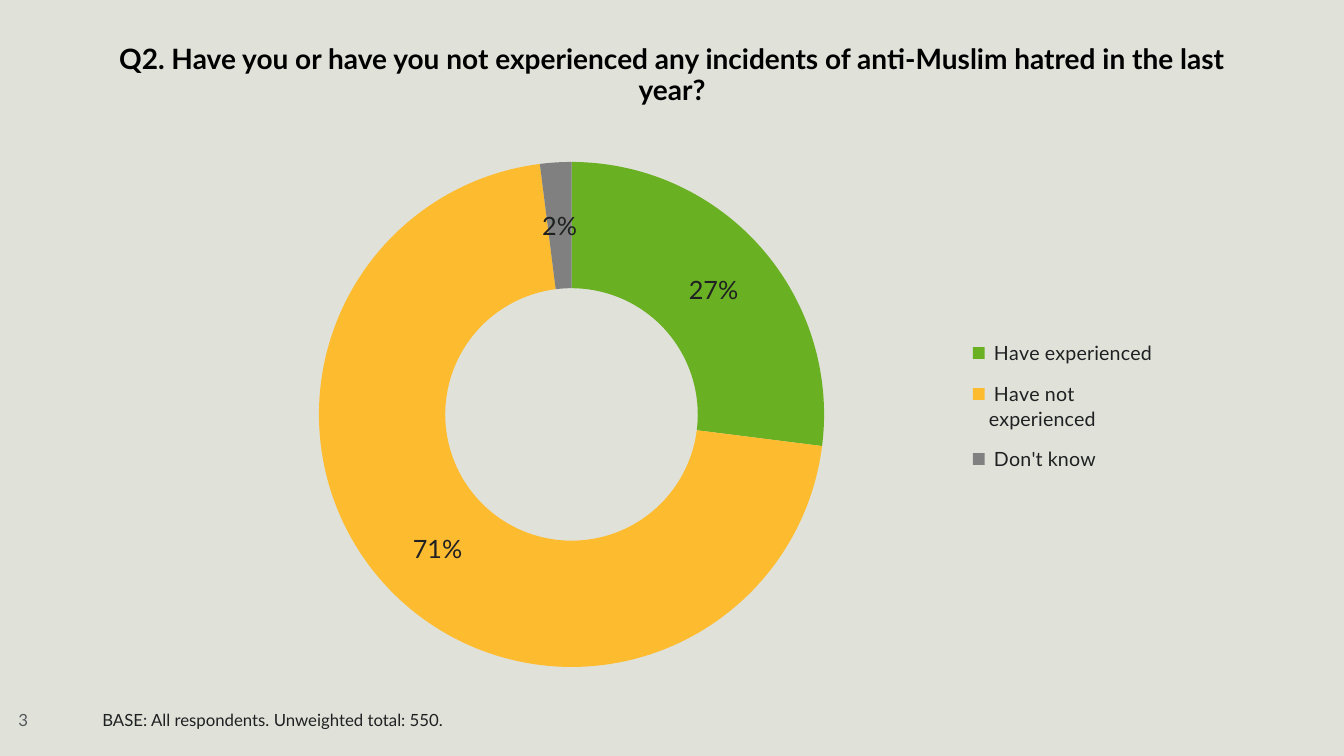
from dataclasses import dataclass

from lxml import etree
from pptx import Presentation
from pptx import util as u
from pptx.chart.data import CategoryChartData
from pptx.dml.color import RGBColor
from pptx.enum import chart as ch
from pptx.enum import text
from pptx.oxml import ns

# Grid of 160 columns by 90 rows
COLS, ROWS = 160, 90
WIDTH, HEIGHT = u.Inches(13.33), u.Inches(7.5)


@dataclass(frozen=True)
class Theme:
    font: str = "Lato"
    background: str = "E0E2DA"
    title: str = "000000"
    ink: str = "1F2021"
    muted: str = "55585A"
    title_size: int = 20
    label_size: int = 18
    legend_size: int = 14
    note_size: int = 12


@dataclass(frozen=True)
class Area:
    col: float
    row: float
    cols: float
    rows: float

    def emu(self) -> tuple[int, int, int, int]:
        return (round(WIDTH * self.col / COLS), round(HEIGHT * self.row / ROWS),
                round(WIDTH * self.cols / COLS), round(HEIGHT * self.rows / ROWS))


@dataclass(frozen=True)
class Label:
    words: str
    area: Area
    size: int
    color: str
    align: text.PP_ALIGN = text.PP_ALIGN.LEFT
    bold: bool = False


@dataclass(frozen=True)
class Answer:
    name: str
    share: float
    color: str


THEME = Theme()
CENTER = text.PP_ALIGN.CENTER
TITLE = Label("Q2. Have you or have you not experienced any incidents of "
              "anti-Muslim hatred in the last year?",
              Area(11, 4.8, 138, 8.5), THEME.title_size, THEME.title, CENTER, True)
NOTES = (
    Label("3", Area(1, 83.4, 7.3, 4.8), THEME.note_size, THEME.muted),
    Label("BASE: All respondents. Unweighted total: 550.",
          Area(11, 83.4, 125, 4.8), THEME.note_size, THEME.ink),
)
ANSWERS = (
    Answer(" Have experienced", 0.27, "6AB023"),
    Answer(" Have not experienced", 0.71, "FDBB30"),
    Answer(" Don't know", 0.02, "808080"),
)
CHART = Area(11, 17.64, 138, 63.5)
RING = Area(37.97, 19.28, 60.14, 60.14)
LEGEND = Area(114.5, 38.6, 24, 19.5)


def write(s, label: Label) -> None:
    """Place a text shape and fill it with one formatted run."""
    s.left, s.top, s.width, s.height = label.area.emu()
    tf = s.text_frame
    tf.word_wrap = True
    tf.auto_size = text.MSO_AUTO_SIZE.NONE
    tf.vertical_anchor = text.MSO_ANCHOR.MIDDLE
    p = tf.paragraphs[0]
    p.alignment = label.align
    p.line_spacing = 0.9
    p.space_before = u.Pt(0)
    r = p.add_run()
    r.text = label.words
    r.font.name = THEME.font
    r.font.size = u.Pt(label.size)
    r.font.bold = label.bold
    r.font.color.rgb = RGBColor.from_string(label.color)


def style_font(font, size: int) -> None:
    font.name = THEME.font
    font.size = u.Pt(size)
    font.color.rgb = RGBColor.from_string(THEME.ink)


def set_layout(parent, before: str, area: Area, inner: bool = False) -> None:
    """Fix a chart part to an area of the slide grid."""
    for old in parent.findall(ns.qn("c:layout")):
        parent.remove(old)
    layout = etree.Element(ns.qn("c:layout"))
    manual = etree.SubElement(layout, ns.qn("c:manualLayout"))
    settings = [("layoutTarget", "inner")] if inner else []
    settings += [("xMode", "edge"), ("yMode", "edge"),
                 ("x", (area.col - CHART.col) / CHART.cols),
                 ("y", (area.row - CHART.row) / CHART.rows),
                 ("w", area.cols / CHART.cols), ("h", area.rows / CHART.rows)]
    for tag, value in settings:
        etree.SubElement(manual, ns.qn(f"c:{tag}")).set("val", str(value))
    parent.find(ns.qn(before)).addprevious(layout)


def add_doughnut(shapes, answers: tuple[Answer, ...]) -> None:
    data = CategoryChartData(number_format="0%")
    data.categories = [a.name for a in answers]
    data.add_series("Series 1", [a.share for a in answers])
    chart = shapes.add_chart(ch.XL_CHART_TYPE.DOUGHNUT, *CHART.emu(), data).chart
    chart.has_title = False
    style_font(chart.font, THEME.label_size)

    # Ring and its labels
    plot = chart.plots[0]
    plot.vary_by_categories = True
    for i, answer in enumerate(answers):
        fill = plot.series[0].points[i].format.fill
        fill.solid()
        fill.fore_color.rgb = RGBColor.from_string(answer.color)
    plot.has_data_labels = True
    labels = plot.data_labels
    labels.show_value = True
    labels.show_percentage = False
    labels.number_format = "0%"
    labels.number_format_is_linked = False
    style_font(labels.font, THEME.label_size)
    ring = chart.element.find(".//" + ns.qn("c:doughnutChart"))
    ring.find(ns.qn("c:holeSize")).set("val", "50")
    set_layout(ring.getparent(), "c:doughnutChart", RING, inner=True)

    # Legend
    chart.has_legend = True
    legend = chart.legend
    legend.position = ch.XL_LEGEND_POSITION.RIGHT
    legend.include_in_layout = False
    style_font(legend.font, THEME.legend_size)
    set_layout(chart.element.find(".//" + ns.qn("c:legend")), "c:overlay", LEGEND)


def main() -> None:
    prs = Presentation()
    prs.slide_width, prs.slide_height = WIDTH, HEIGHT
    slide = prs.slides.add_slide(prs.slide_layouts[5])
    fill = slide.background.fill
    fill.solid()
    fill.fore_color.rgb = RGBColor.from_string(THEME.background)

    # Title, chart, then page number and base note
    write(slide.shapes.title, TITLE)
    add_doughnut(slide.shapes, ANSWERS)
    for note in NOTES:
        write(slide.shapes.add_textbox(*note.area.emu()), note)
    prs.save("out.pptx")


if __name__ == "__main__":
    main()
